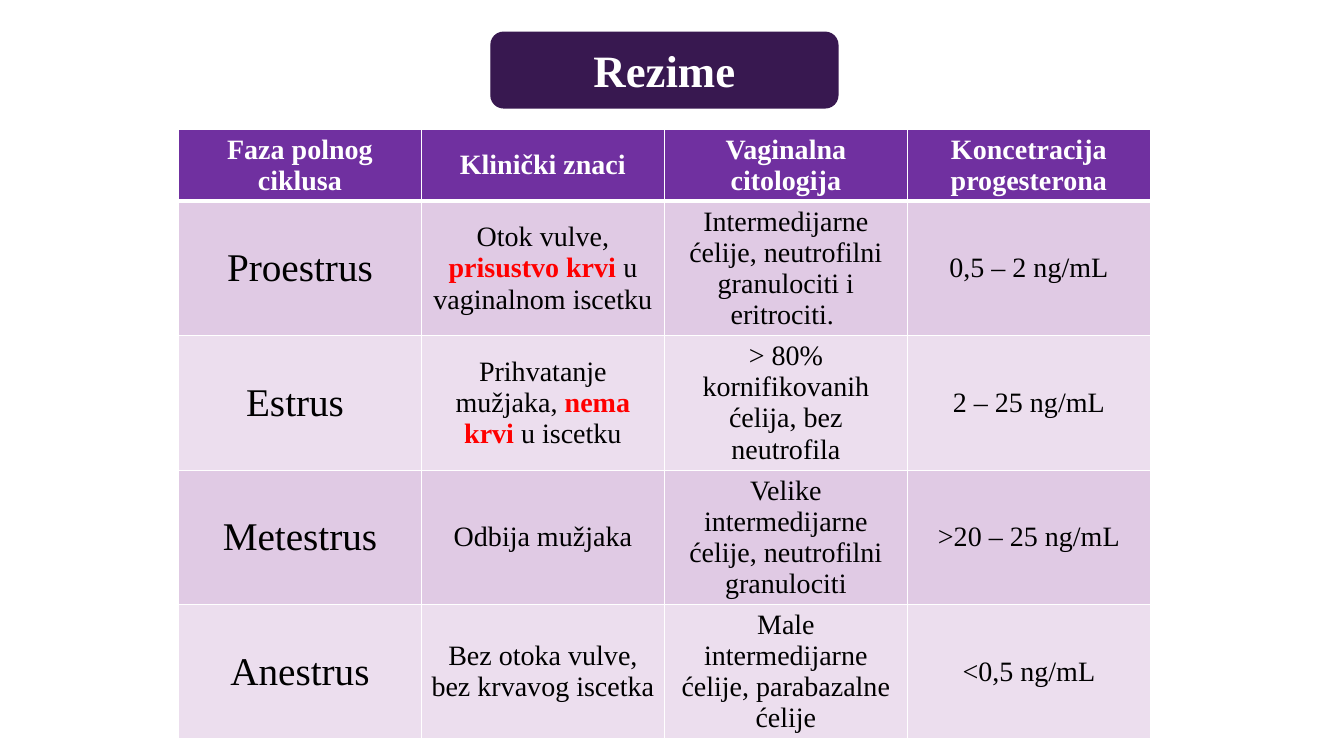
from lxml.etree import SubElement
from pptx import Presentation
from pptx.dml.color import RGBColor
from pptx.enum.shapes import MSO_SHAPE as Preset
from pptx.enum.text import MSO_ANCHOR as Anchor, MSO_AUTO_SIZE as AutoSize, PP_ALIGN as Align
from pptx.oxml.ns import qn
from pptx.util import Inches, Pt

TITLE = "Rezime"
HEADINGS = ["Faza polnog ciklusa", "Klinički znaci", "Vaginalna citologija", "Koncetracija progesterona"]
PHASES = [
    ("Proestrus", ["Otok vulve, ", "prisustvo krvi ", "u vaginalnom iscetku"],
     "Intermedijarne ćelije, neutrofilni granulociti i eritrociti. ", "0,5 – 2 ng/mL"),
    ("Estrus ", ["Prihvatanje mužjaka, ", "nema krvi ", "u iscetku"],
     "> 80% kornifikovanih ćelija, bez neutrofila", "2 – 25 ng/mL"),
    ("Metestrus", "Odbija mužjaka",
     "Velike intermedijarne ćelije, neutrofilni granulociti", ">20 – 25 ng/mL"),
    ("Anestrus", "Bez otoka vulve, bez krvavog iscetka",
     "Male intermedijarne ćelije, parabazalne ćelije", "<0,5 ng/mL"),
]
FONT = "Times New Roman"
WHITE, BLACK, RED = "FFFFFF", "000000", "FF0000"
BANNER, HEADER, BANDS = "381850", "7030A0", ("E0CAE4", "ECDEEE")
BANNER_BOX = [Inches(n) for n in (4.87, 0.32, 3.44, 0.75)]
TABLE_LEFT, TABLE_TOP, COLUMN = Inches(1.77), Inches(1.28), Inches(2.41)
HEADER_HEIGHT, PHASE_HEIGHT = Inches(0.71), Inches(1.33)


def color(hex_code):
    return RGBColor.from_string(hex_code)


def write(frame, text, size=20, ink=BLACK, bold=False):
    paragraph = frame.paragraphs[0]
    paragraph.alignment = Align.CENTER
    pieces = [text] if isinstance(text, str) else text
    for position, piece in enumerate(pieces):
        stressed = position % 2 == 1
        run = paragraph.add_run()
        run.text = piece
        run.font.name = FONT
        run.font.size = Pt(size)
        run.font.bold = bold or stressed
        run.font.color.rgb = color(RED if stressed else ink)


def add_borders(cell, bottom):
    properties = cell._tc.get_or_add_tcPr()
    for side, width in (("L", 1), ("R", 1), ("T", 1), ("B", bottom)):
        border = SubElement(properties, qn(f"a:ln{side}"), w=str(Pt(width)))
        SubElement(SubElement(border, qn("a:solidFill")), qn("a:srgbClr"), val=WHITE)


def add_title(slide):
    banner = slide.shapes.add_shape(Preset.ROUNDED_RECTANGLE, *BANNER_BOX)
    banner.shadow.inherit = False
    banner.fill.solid()
    banner.fill.fore_color.rgb = color(BANNER)
    banner.line.color.rgb = color(BANNER)
    banner.line.width = Pt(1)
    title = slide.shapes.title
    title.left, title.top, title.width, title.height = BANNER_BOX
    title.text_frame.auto_size = AutoSize.NONE
    title.text_frame.vertical_anchor = Anchor.MIDDLE
    write(title.text_frame, TITLE, size=32, ink=WHITE, bold=True)
    title._element.addprevious(banner._element)


def add_phases(slide):
    rows = [HEADINGS, *PHASES]
    height = HEADER_HEIGHT + PHASE_HEIGHT * len(PHASES)
    table = slide.shapes.add_table(len(rows), len(HEADINGS), TABLE_LEFT, TABLE_TOP,
                                   COLUMN * len(HEADINGS), height).table
    for r, entries in enumerate(rows):
        heading = r == 0
        table.rows[r].height = HEADER_HEIGHT if heading else PHASE_HEIGHT
        for c, entry in enumerate(entries):
            cell = table.cell(r, c)
            cell.vertical_anchor = Anchor.MIDDLE
            add_borders(cell, bottom=3 if heading else 1)
            cell.fill.solid()
            cell.fill.fore_color.rgb = color(HEADER if heading else BANDS[(r - 1) % 2])
            write(cell.text_frame, entry, size=28 if c == 0 and not heading else 20,
                  ink=WHITE if heading else BLACK, bold=heading)


def main():
    deck = Presentation()
    deck.slide_width, deck.slide_height = Inches(13.33), Inches(7.5)
    slide = deck.slides.add_slide(deck.slide_layouts[5])
    add_title(slide)
    add_phases(slide)
    deck.save("out.pptx")


if __name__ == "__main__":
    main()
